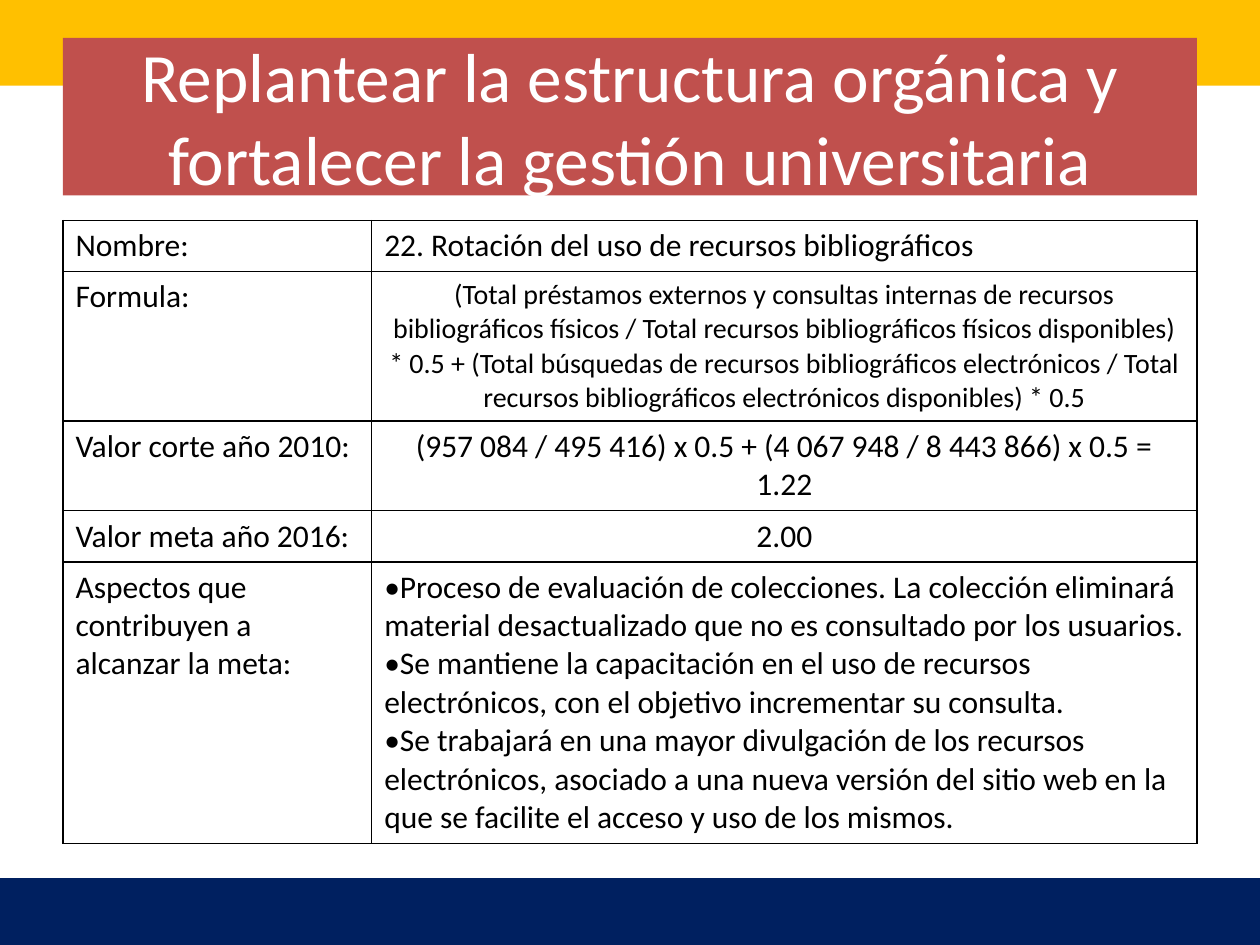
from dataclasses import dataclass

from lxml.etree import SubElement
from pptx import Presentation
from pptx.dml.color import RGBColor
from pptx.enum.shapes import MSO_SHAPE
from pptx.enum.text import MSO_ANCHOR, PP_ALIGN
from pptx.oxml.ns import qn
from pptx.util import Inches, Pt

FONT = "Calibri"
BLACK, WHITE = "000000", "FFFFFF"


@dataclass
class Box:
    left: float
    top: float
    width: float
    height: float
    fill: str
    text: str = ""


@dataclass
class Row:
    label: str
    lines: list[str]
    size: float = 18
    align: PP_ALIGN = PP_ALIGN.LEFT
    bullet: bool = False
    inset: float = 0.1


BOXES = [
    Box(0, -0.03, 10, 0.71, "FFC000"),
    Box(-0.03, 6.97, 10.03, 0.59, "002060"),
    Box(0.5, 0.3, 9, 1.25, "C0504D",
        "Replantear la estructura orgánica y fortalecer la gestión universitaria"),
]

ROWS = [
    Row("Nombre:", ["22. Rotación del uso de recursos bibliográficos"]),
    Row("Formula:", [
        "(Total préstamos externos y consultas internas de recursos "
        "bibliográficos físicos / Total recursos bibliográficos físicos "
        "disponibles) * 0.5 + (Total búsquedas de recursos bibliográficos "
        "electrónicos / Total recursos bibliográficos electrónicos "
        "disponibles) * 0.5"], 16, PP_ALIGN.CENTER),
    Row("Valor corte año 2010:",
        ["(957 084 / 495 416) x 0.5 + (4 067 948 / 8 443 866) x 0.5 = 1.22"],
        align=PP_ALIGN.CENTER, inset=0.12),
    Row("Valor meta año 2016:", ["2.00"], align=PP_ALIGN.CENTER),
    Row("Aspectos que contribuyen a alcanzar la meta:", [
        "Proceso de evaluación de colecciones. La colección eliminará material "
        "desactualizado que no es consultado por los usuarios.",
        "Se mantiene la capacitación en el uso de recursos electrónicos, con el "
        "objetivo incrementar su consulta.",
        "Se trabajará en una mayor divulgación de los recursos electrónicos, "
        "asociado a una nueva versión del sitio web en la que se facilite el "
        "acceso y uso de los mismos."], bullet=True),
]


def color(code: str) -> RGBColor:
    return RGBColor.from_string(code)


def write(frame, lines: list[str], size: float, tint: str,
          align: PP_ALIGN, bullet: bool = False) -> None:
    frame.word_wrap = True
    for num, line in enumerate(lines):
        para = frame.paragraphs[0] if num == 0 else frame.add_paragraph()
        para.text = line
        para.alignment = align
        para.font.name = FONT
        para.font.size = Pt(size)
        para.font.color.rgb = color(tint)
        if bullet:
            # Bullet parts must come before the default run properties
            props = para._p.get_or_add_pPr()
            last = props.find(qn("a:defRPr"))
            last.addprevious(SubElement(props, qn("a:buFont"), typeface=FONT))
            last.addprevious(SubElement(props, qn("a:buChar"), char="•"))


def draw_box(slide, box: Box) -> None:
    shape = slide.shapes.add_shape(
        MSO_SHAPE.RECTANGLE, Inches(box.left), Inches(box.top),
        Inches(box.width), Inches(box.height))
    shape.shadow.inherit = False
    shape.fill.solid()
    shape.fill.fore_color.rgb = color(box.fill)
    shape.line.fill.background()
    if box.text:
        shape.text_frame.vertical_anchor = MSO_ANCHOR.MIDDLE
        write(shape.text_frame, [box.text], 39.6, WHITE, PP_ALIGN.CENTER)


def frame_cell(cell) -> None:
    props = cell._tc.get_or_add_tcPr()
    for side in ("lnL", "lnR", "lnT", "lnB"):
        line = SubElement(props, qn(f"a:{side}"), w=str(Pt(1)))
        fill = SubElement(line, qn("a:solidFill"))
        SubElement(fill, qn("a:srgbClr"), val=BLACK)
    cell.fill.background()


def draw_table(slide, rows: list[Row]) -> None:
    high = 0.4
    table = slide.shapes.add_table(
        len(rows), 2, Inches(0.5), Inches(1.75),
        Inches(9), Inches(high * len(rows))).table
    table.first_row = table.horz_banding = False
    for col, width in zip(table.columns, (2.45, 6.55)):
        col.width = Inches(width)
    for num, row in enumerate(rows):
        table.rows[num].height = Inches(high)
        label, value = table.cell(num, 0), table.cell(num, 1)
        write(label.text_frame, [row.label], 18, BLACK, PP_ALIGN.LEFT)
        write(value.text_frame, row.lines, row.size, BLACK, row.align, row.bullet)
        value.margin_left = value.margin_right = Inches(row.inset)
        frame_cell(label)
        frame_cell(value)


def main() -> None:
    deck = Presentation()
    deck.slide_width, deck.slide_height = Inches(10), Inches(7.5)
    slide = deck.slides.add_slide(deck.slide_layouts[6])

    # Colour bands and title
    for box in BOXES:
        draw_box(slide, box)

    # Indicator sheet
    draw_table(slide, ROWS)
    deck.save("out.pptx")


if __name__ == "__main__":
    main()
